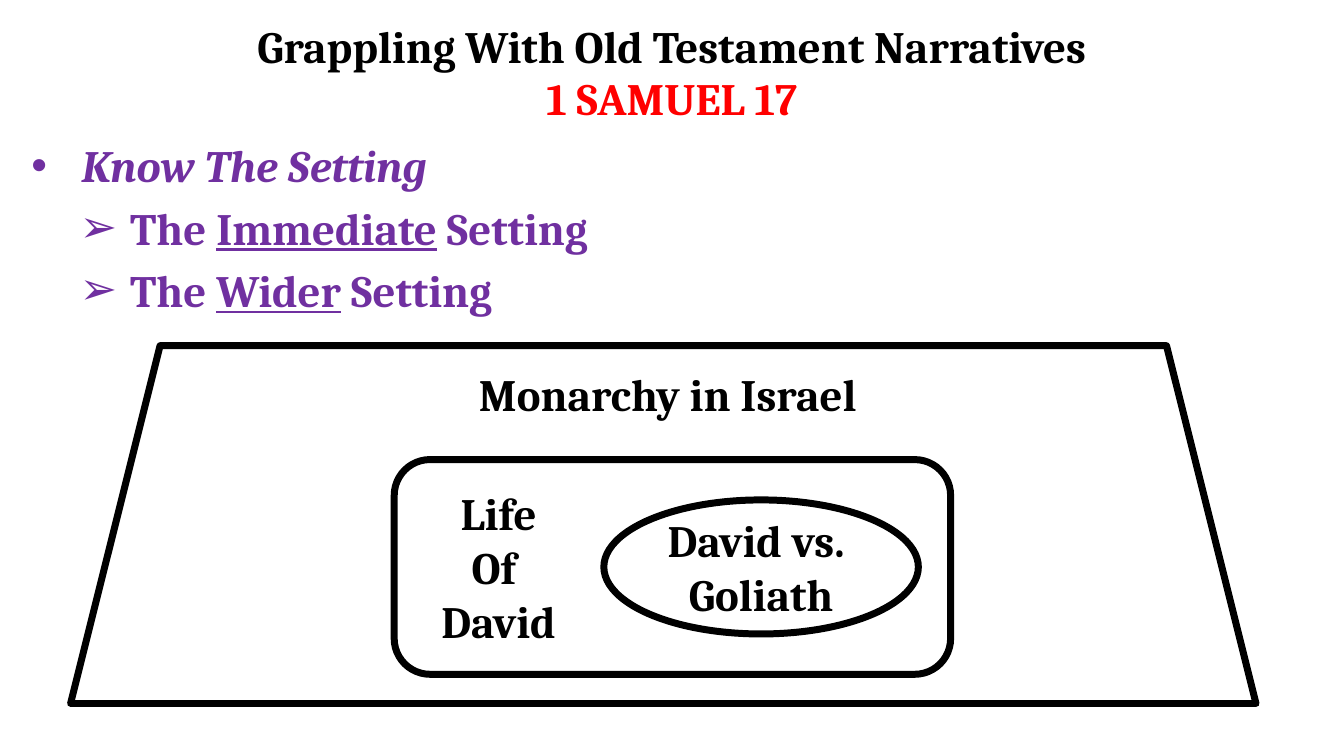
from dataclasses import dataclass

from lxml import etree
from pptx import Presentation
from pptx.dml.color import RGBColor
from pptx.enum.shapes import MSO_SHAPE
from pptx.enum.text import MSO_ANCHOR, MSO_AUTO_SIZE, PP_ALIGN
from pptx.oxml.ns import qn
from pptx.util import Inches, Pt

CENTER, LEFT = PP_ALIGN.CENTER, PP_ALIGN.LEFT
TOP, MIDDLE = MSO_ANCHOR.TOP, MSO_ANCHOR.MIDDLE
NO_AUTOFIT = MSO_AUTO_SIZE.NONE
TRAPEZOID, ROUNDED, OVAL = MSO_SHAPE.TRAPEZOID, MSO_SHAPE.ROUNDED_RECTANGLE, MSO_SHAPE.OVAL


@dataclass(frozen=True)
class Theme:
    font: str = "Cambria"
    size: int = 32
    ink: str = "000000"
    accent: str = "FF0000"
    list_color: str = "7030A0"
    line_width: int = 5
    list_gap: int = 6
    hanging: float = 0.5
    level_step: float = 0.48


class SettingSlide:
    """Holds the theme and slide; areas are left, top, width, height in percent."""

    def __init__(self, presentation, theme):
        self.theme = theme
        self.page = presentation.slide_width, presentation.slide_height
        self.slide = presentation.slides.add_slide(presentation.slide_layouts[1])

    def box(self, area):
        return [int(share * side / 100) for share, side in zip(area, self.page * 2)]

    def place(self, shape, area):
        shape.left, shape.top, shape.width, shape.height = self.box(area)

    def format_run(self, run, color):
        font = run.font
        font.name, font.size, font.bold = self.theme.font, Pt(self.theme.size), True
        font.color.rgb = RGBColor.from_string(color)

    def fill_text(self, shape, text, color, anchor=TOP, spacing=1.0):
        frame = shape.text_frame
        frame.text = text
        frame.word_wrap, frame.auto_size = True, NO_AUTOFIT
        frame.vertical_anchor = anchor
        for paragraph in frame.paragraphs:
            paragraph.alignment, paragraph.line_spacing = CENTER, spacing
            for run in paragraph.runs:
                self.format_run(run, color)

    def title(self, area, text):
        shape = self.slide.shapes.title
        self.place(shape, area)
        self.fill_text(shape, text, self.theme.ink, MIDDLE, 0.9)

    def label(self, area, text, color=None):
        shape = self.slide.shapes.add_textbox(*self.box(area))
        self.fill_text(shape, text, color or self.theme.ink)

    def outline(self, kind, area, text=""):
        shape = self.slide.shapes.add_shape(kind, *self.box(area))
        shape.shadow.inherit = False
        shape.fill.background()
        shape.line.color.rgb = RGBColor.from_string(self.theme.ink)
        shape.line.width = Pt(self.theme.line_width)
        if text:
            self.fill_text(shape, text, self.theme.ink, MIDDLE)

    def bullet(self, paragraph, character):
        indent = self.theme.hanging + self.theme.level_step * paragraph.level
        properties = paragraph._p.get_or_add_pPr()
        properties.set("marL", str(Inches(indent)))
        properties.set("indent", str(-Inches(self.theme.hanging)))
        etree.SubElement(properties, qn("a:buFont")).set("typeface", "Arial")
        etree.SubElement(properties, qn("a:buChar")).set("char", character)

    def bullet_list(self, area, heading, underlined_words):
        body = self.slide.placeholders[1]
        self.place(body, area)
        frame = body.text_frame
        frame.auto_size, frame.vertical_anchor = NO_AUTOFIT, TOP
        entries = [(0, "•", [heading])]
        entries += [(1, "➢", ["The ", word, " Setting"]) for word in underlined_words]
        for index, (level, character, parts) in enumerate(entries):
            paragraph = frame.add_paragraph() if index else frame.paragraphs[0]
            paragraph.level, paragraph.alignment = level, LEFT
            paragraph.line_spacing = 1.0
            paragraph.space_before, paragraph.space_after = Pt(0), Pt(self.theme.list_gap)
            self.bullet(paragraph, character)
            for part in parts:
                run = paragraph.add_run()
                run.text = part
                self.format_run(run, self.theme.list_color)
                run.font.italic = level == 0
                run.font.underline = part in underlined_words


def main():
    presentation = Presentation()
    presentation.slide_width, presentation.slide_height = Inches(13.33), Inches(7.5)
    theme = Theme()
    page = SettingSlide(presentation, theme)

    page.title((0, 0, 100, 12.93), "Grappling With Old Testament Narratives")
    page.label((0, 8.67, 100, 8.53), "1 SAMUEL 17", theme.accent)
    page.bullet_list((1.58, 17.6, 60, 25.6), "Know The Setting", ("Immediate", "Wider"))

    page.outline(TRAPEZOID, (5.25, 45.73, 88.2, 47.33))
    page.label((14.93, 47.87, 69.53, 8.53), "Monarchy in Israel")
    page.outline(ROUNDED, (29.33, 60.8, 41.4, 28.4))
    page.label((31.88, 63.6, 10.43, 22.93), "Life\nOf \nDavid")
    page.outline(OVAL, (44.93, 66.13, 23.4, 17.73), "David vs. \nGoliath")

    presentation.save("out.pptx")


if __name__ == "__main__":
    main()
